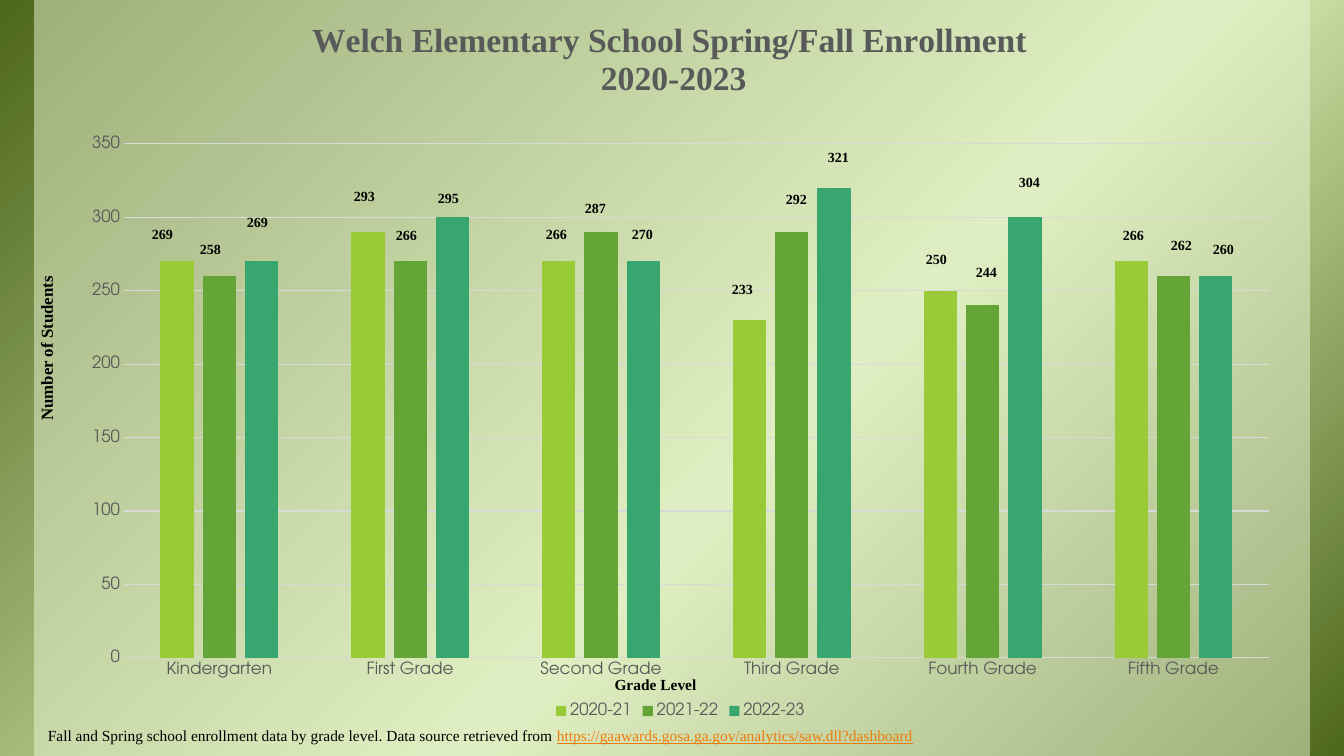
from lxml import etree
from pptx import Presentation
from pptx.chart.data import CategoryChartData
from pptx.dml.color import RGBColor
from pptx.enum.chart import XL_CHART_TYPE as ChartType
from pptx.enum.chart import XL_LEGEND_POSITION as LegendPosition
from pptx.enum.chart import XL_TICK_MARK as TickMark
from pptx.enum.shapes import MSO_SHAPE as Shape
from pptx.enum.text import MSO_AUTO_SIZE as AutoSize
from pptx.enum.text import PP_ALIGN as Align
from pptx.oxml import parse_xml
from pptx.oxml.ns import nsdecls, qn
from pptx.util import Emu, Pt

PX = 914400 / 100.8
SERIF = "Times New Roman"
SANS = "TeX Gyre Adventor"
BLACK = RGBColor(0x00, 0x00, 0x00)
GREY = RGBColor(0x59, 0x59, 0x59)
GRID = RGBColor(0xD9, 0xD9, 0xD9)
DARK_GREEN = RGBColor(0x4D, 0x67, 0x1B)
PALE_GREEN = RGBColor(0xD6, 0xEA, 0xAF)
VEIL = RGBColor(0xEB, 0xF5, 0xD7)
LINK = RGBColor(0xEE, 0x7B, 0x08)
YEAR_COLORS = [RGBColor(0x99, 0xCB, 0x38), RGBColor(0x63, 0xA5, 0x37),
               RGBColor(0x37, 0xA7, 0x6F)]

TITLE = ["Welch Elementary School Spring/Fall Enrollment ", "2020-2023"]
GRADES = ["Kindergarten", "First Grade", "Second Grade", "Third Grade",
          "Fourth Grade", "Fifth Grade"]
ENROLLMENT = {
    "2020-21": [270, 290, 270, 230, 250, 270],
    "2021-22": [260, 270, 290, 290, 240, 260],
    "2022-23": [270, 300, 270, 320, 300, 260],
}
BAR_LABELS = [
    ("269", 75, 205), ("258", 123, 220), ("269", 170, 193),
    ("293", 277, 167), ("266", 319, 206), ("295", 361, 169),
    ("266", 469, 205), ("287", 508, 179), ("270", 555, 205),
    ("233", 655, 260), ("292", 709, 170), ("321", 751, 128),
    ("250", 849, 230), ("244", 899, 243), ("304", 942, 153),
    ("266", 1046, 206), ("262", 1094, 216), ("260", 1136, 220),
]


def px(*lengths):
    """Turn pixel lengths into EMU."""
    return [Emu(round(length * PX)) for length in lengths]


def set_font(font, name, size, color, bold=False):
    """Set the face, size, colour and weight of a font."""
    font.name, font.size, font.bold = name, Pt(size), bold
    font.color.rgb = color


def add_panel(slide, box):
    """Add a plain rectangle without outline or shadow."""
    panel = slide.shapes.add_shape(Shape.RECTANGLE, *px(*box))
    panel.shadow.inherit = False
    panel.line.fill.background()
    return panel


def add_backdrop(slide, box):
    """Fill the box with a diagonal gradient under a translucent veil."""
    left, top, width, height = box
    backdrop = add_panel(slide, box)
    stops = "".join(
        f'<a:gs pos="{position}"><a:srgbClr val="{color}"/></a:gs>'
        for position, color in [(0, DARK_GREEN), (58000, PALE_GREEN), (100000, DARK_GREEN)])
    gradient = parse_xml(f'<a:gradFill {nsdecls("a")} rotWithShape="1"><a:gsLst>{stops}'
                         '</a:gsLst><a:lin ang="2700000" scaled="0"/></a:gradFill>')
    backdrop.element.spPr.find(qn("a:prstGeom")).addnext(gradient)
    veil = add_panel(slide, (left + 34, top, width - 68, height))
    veil.fill.solid()
    veil.fill.fore_color.rgb = VEIL
    color = veil.element.spPr.find(qn("a:solidFill"))[0]
    etree.SubElement(color, qn("a:alpha"), val="50000")


def add_text(slide, box, runs, size, bold=False, align=Align.LEFT, spacing=None):
    """Add a one-paragraph text box from pieces of text."""
    text_box = slide.shapes.add_textbox(*px(*box))
    frame = text_box.text_frame
    frame.word_wrap = True
    frame.auto_size = AutoSize.SHAPE_TO_FIT_TEXT
    paragraph = frame.paragraphs[0]
    paragraph.alignment = align
    paragraph.line_spacing = spacing
    for text in runs:
        paragraph.add_run().text = text
    set_font(paragraph.font, SERIF, size, BLACK, bold)
    return text_box


def place_part(part, index, chart_size, target="", **lengths):
    """Fix a chart part at pixel lengths within the chart."""
    width, height = chart_size
    whole = {"x": width, "y": height, "w": width, "h": height}
    fractions = "".join(f'<c:{key} val="{length / whole[key]:.5f}"/>'
                        for key, length in lengths.items())
    layout = parse_xml(
        f'<c:layout {nsdecls("c")}><c:manualLayout>{target}'
        f'<c:xMode val="edge"/><c:yMode val="edge"/>{fractions}</c:manualLayout></c:layout>')
    for default_layout in part.findall(qn("c:layout")):
        part.remove(default_layout)
    part.insert(index, layout)


def add_chart_title(chart):
    """Write the two-line chart title."""
    chart.has_title = True
    frame = chart.chart_title.text_frame
    chart.chart_title.include_in_layout = False
    for index, line in enumerate(TITLE):
        paragraph = frame.add_paragraph() if index else frame.paragraphs[0]
        paragraph.add_run().text = line
        set_font(paragraph.font, SERIF, 24, GREY, True)


def add_enrollment_chart(slide, box):
    """Draw the column chart with its hand-placed bar labels."""
    left, top, width, height = box
    data = CategoryChartData()
    data.categories = GRADES
    for year, students in ENROLLMENT.items():
        data.add_series(year, students)
    chart = slide.shapes.add_chart(ChartType.COLUMN_CLUSTERED, *px(*box), data).chart
    set_font(chart.font, SANS, 10, BLACK)
    add_chart_title(chart)
    place_part(chart.chart_title.element, 1, (width, height), x=242, y=-5)
    place_part(chart.element.chart.plotArea, 0, (width, height),
               '<c:layoutTarget val="inner"/>', x=57, y=127, w=1145, h=514)

    columns = chart.plots[0]
    columns.vary_by_categories = False
    columns.gap_width, columns.overlap = 219, -27
    for series, color in zip(columns.series, YEAR_COLORS):
        series.format.fill.solid()
        series.format.fill.fore_color.rgb = color

    grades, students = chart.category_axis, chart.value_axis
    for axis in (grades, students):
        axis.major_tick_mark = axis.minor_tick_mark = TickMark.NONE
        set_font(axis.tick_labels.font, SANS, 12, GREY)
    students.minimum_scale, students.maximum_scale, students.major_unit = 0, 350, 50
    students.format.line.fill.background()
    for line in (grades.format.line, students.major_gridlines.format.line):
        line.color.rgb = GRID
        line.width = Pt(0.75)

    chart.has_legend = True
    chart.legend.position = LegendPosition.BOTTOM
    chart.legend.include_in_layout = False
    set_font(chart.legend.font, SANS, 12, GREY)

    for count, x, y in BAR_LABELS:
        add_text(slide, (left + x, top + y, 42, 26), [count], 10, True, spacing=0.95)


def add_axis_titles(slide, box):
    """Name the vertical and horizontal axes of the chart in the box."""
    left, top, width, height = box
    vertical = add_text(slide, (left - 251, top + 317, 462, 29), ["Number of Students"],
                        12, True, Align.CENTER, 0.95)
    vertical.rotation = 270
    add_text(slide, (left + 386, top + 655, 405, 28), ["Grade Level"],
             11, True, Align.CENTER, 0.95)


def add_source_line(slide, box):
    """Credit the data source under the chart."""
    source = add_text(slide, box, [
        "Fall and Spring school enrollment data by grade level. Data source retrieved from ",
        "https://gaawards.gosa.ga.gov/analytics/saw.dll?dashboard"], 11)
    address = source.text_frame.paragraphs[0].runs[1]
    address.font.color.rgb = LINK
    address.font.underline = True


def main():
    """Build the enrollment slide and save it."""
    deck = Presentation()
    deck.slide_width, deck.slide_height = px(1344, 756)
    slide = deck.slides.add_slide(deck.slide_layouts[6])
    chart_box = (67, 17, 1227, 706)
    add_backdrop(slide, (0, 0, 1344, 756))
    add_enrollment_chart(slide, chart_box)
    add_axis_titles(slide, chart_box)
    add_source_line(slide, (38, 721, 1285, 29))
    deck.save("out.pptx")


if __name__ == "__main__":
    main()
